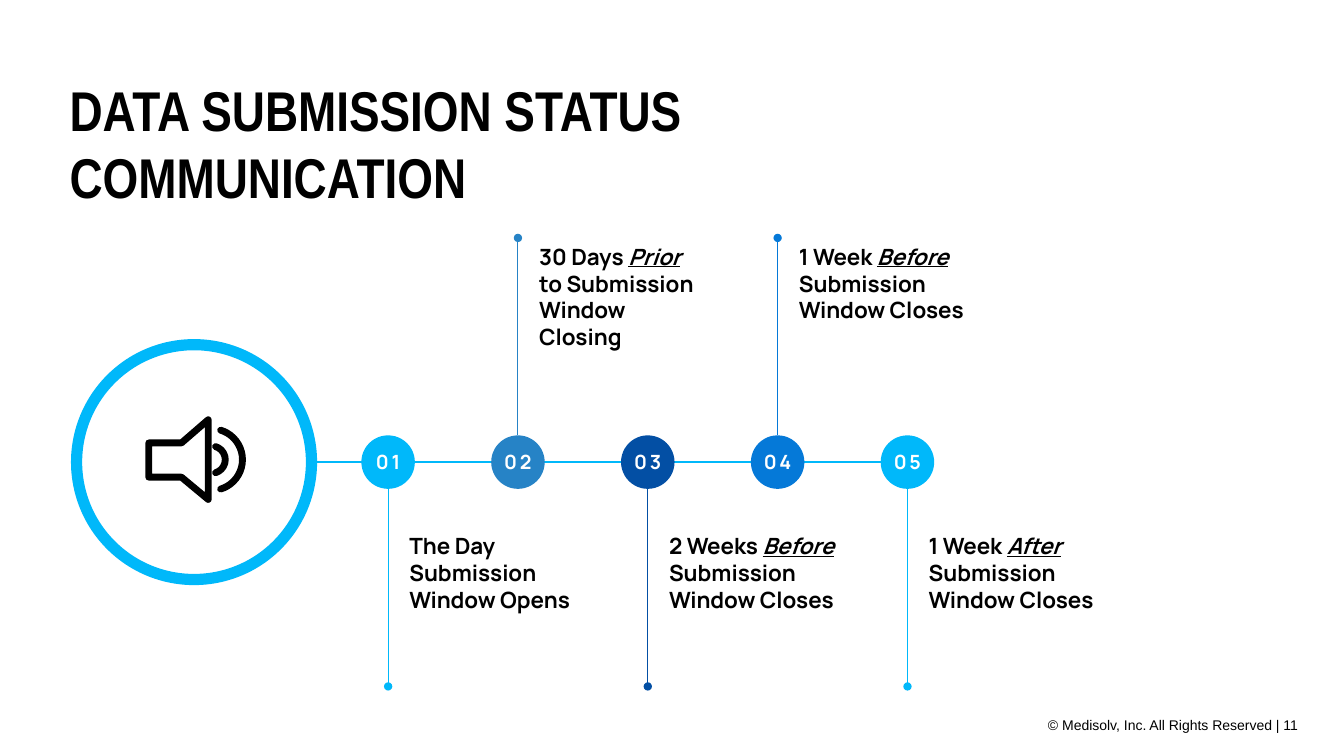
"""Build the data submission status timeline slide."""
from lxml.etree import SubElement
from pptx import Presentation
from pptx.dml.color import RGBColor
from pptx.enum.shapes import MSO_CONNECTOR, MSO_SHAPE
from pptx.enum.text import MSO_ANCHOR, MSO_AUTO_SIZE, PP_ALIGN
from pptx.oxml.ns import qn
from pptx.util import Inches, Pt

TITLE = "DATA SUBMISSION STATUS COMMUNICATION"
COPYRIGHT = "© Medisolv, Inc. All Rights Reserved | 11"
MILESTONES = [
    ("01", ("The Day Submission Window Opens", "", ""), "sky"),
    ("02", ("30 Days ", "Prior", " to Submission Window Closing"), "steel"),
    ("03", ("2 Weeks ", "Before", " Submission Window Closes"), "navy"),
    ("04", ("1 Week ", "Before ", "Submission Window Closes"), "azure"),
    ("05", ("1 Week ", "After", " Submission Window Closes"), "sky"),
]

THEME = {
    "colours": {"sky": "00B8FA", "steel": "2683C6", "navy": "034FA4",
                "azure": "0579D8", "black": "000000", "white": "FFFFFF"},
    "title": {"name": "Arial Narrow", "size": 40, "bold": True, "colour": "black"},
    "label": {"name": "Manrope", "size": 16, "bold": True, "colour": "black"},
    "number": {"name": "Manrope", "size": 14, "bold": True, "colour": "white"},
    "footer": {"name": "Arial", "size": 10, "bold": False, "colour": "black"},
    "strokes": {"ring": 8, "axis": 1, "stem": 0.75, "icon": 4.9},
}

SLIDE_WIDTH, SLIDE_HEIGHT = Inches(13.33), Inches(7.5)
COLUMN, ROW = SLIDE_WIDTH / 100, SLIDE_HEIGHT / 100

TITLE_BOX = (5.18, 9.2, 57.84, 19.33)
FOOTER_BOX = (47.26, 94.13, 50.04, 3.6)
AXIS_ROW = 61.13
RING_COLUMN, RING_DIAMETER = 14.44, 17.48
FIRST_COLUMN, LAST_COLUMN, NODE_DIAMETER = 28.88, 67.52, 3.98
ABOVE = {"direction": -1, "tip": 31.47, "top": 31.47, "width": 12.45, "height": 15.73}
BELOW = {"direction": 1, "tip": 90.8, "top": 69.73, "width": 13.28, "height": 12.13}
LABEL_GAP = 1.58
SPEAKER = [(11.07, 58.6), (13.5, 58.6), (15.49, 55.53),
           (15.49, 66.07), (13.5, 63.13), (11.07, 63.13)]
WAVE_COLUMN, WAVE_ROW, WAVE_DIAMETERS, WAVE_ANGLE = 15.75, 60.8, (2.03, 4.58), 73


def colour(name):
    return RGBColor.from_string(THEME["colours"][name])


def box(left, top, width, height):
    return (round(left * COLUMN), round(top * ROW),
            round(width * COLUMN), round(height * ROW))


def round_box(column, row, diameter):
    size = diameter * COLUMN
    return (round(column * COLUMN - size / 2), round(row * ROW - size / 2),
            round(size), round(size))


def add_run(paragraph, text, style, **extra):
    run = paragraph.add_run()
    run.text = text
    settings = {"name": style["name"], "size": Pt(style["size"]), "bold": style["bold"]}
    for attribute, value in {**settings, **extra}.items():
        setattr(run.font, attribute, value)
    run.font.color.rgb = colour(style["colour"])
    return run


def prepare_frame(shape, side_inset=0, **extra):
    settings = {"word_wrap": True, "auto_size": MSO_AUTO_SIZE.NONE,
                "margin_left": Inches(side_inset), "margin_right": Inches(side_inset),
                "margin_top": Inches(0.05), "margin_bottom": Inches(0.05),
                "vertical_anchor": MSO_ANCHOR.TOP}
    for attribute, value in {**settings, **extra}.items():
        setattr(shape.text_frame, attribute, value)
    return shape.text_frame.paragraphs[0]


def set_stroke(shape, colour_name, stroke):
    shape.line.color.rgb = colour(colour_name)
    shape.line.width = Pt(THEME["strokes"][stroke])
    return shape.element.spPr.find(qn("a:ln"))


def outline(shape, colour_name, stroke):
    shape.shadow.inherit = False
    shape.fill.background()
    return set_stroke(shape, colour_name, stroke)


def add_line(slide, start, end, colour_name, stroke):
    connector = slide.shapes.add_connector(
        MSO_CONNECTOR.STRAIGHT, *(round(value) for value in (*start, *end)))
    line = set_stroke(connector, colour_name, stroke)
    SubElement(connector.element.spPr, qn("a:effectLst"))
    return line


def add_title(slide):
    title = slide.shapes.title
    title.left, title.top, title.width, title.height = box(*TITLE_BOX)
    paragraph = prepare_frame(title, vertical_anchor=MSO_ANCHOR.MIDDLE)
    paragraph.alignment = PP_ALIGN.LEFT
    add_run(paragraph, TITLE, THEME["title"])


def add_footer(slide):
    footer = slide.shapes.add_textbox(*box(*FOOTER_BOX))
    paragraph = prepare_frame(footer, 0.1)
    paragraph.alignment = PP_ALIGN.RIGHT
    add_run(paragraph, COPYRIGHT, THEME["footer"])


def add_speaker(slide):
    points = [(round(column * COLUMN), round(row * ROW)) for column, row in SPEAKER]
    builder = slide.shapes.build_freeform(*points[0])
    builder.add_line_segments(points[1:], close=True)
    parts = [builder.convert_to_shape()]
    for diameter in WAVE_DIAMETERS:
        wave = slide.shapes.add_shape(
            MSO_SHAPE.ARC, *round_box(WAVE_COLUMN, WAVE_ROW, diameter))
        wave.adjustments[0] = (360 - WAVE_ANGLE) * 0.6
        wave.adjustments[1] = WAVE_ANGLE * 0.6
        parts.append(wave)
    for part in parts:
        line = outline(part, "black", "icon")
        line.set("cap", "rnd")
        SubElement(line, qn("a:round"))


def add_milestone(slide, column, side, number, label, colour_name):
    edge = AXIS_ROW * ROW + side["direction"] * NODE_DIAMETER * COLUMN / 2
    line = add_line(slide, (column * COLUMN, side["tip"] * ROW),
                    (column * COLUMN, edge), colour_name, "stem")
    SubElement(line, qn("a:headEnd"), type="oval")

    node = slide.shapes.add_shape(
        MSO_SHAPE.OVAL, *round_box(column, AXIS_ROW, NODE_DIAMETER))
    node.shadow.inherit = False
    node.fill.solid()
    node.fill.fore_color.rgb = colour(colour_name)
    node.line.fill.background()
    paragraph = prepare_frame(node, word_wrap=False, vertical_anchor=MSO_ANCHOR.MIDDLE)
    paragraph.alignment = PP_ALIGN.CENTER
    run = add_run(paragraph, number, THEME["number"])
    run.font._element.set("spc", "200")

    caption = slide.shapes.add_textbox(
        *box(column + LABEL_GAP, side["top"], side["width"], side["height"]))
    paragraph = prepare_frame(caption)
    for text, emphasis in zip(label, (False, True, False)):
        if text:
            add_run(paragraph, text, THEME["label"], italic=emphasis, underline=emphasis)


def main():
    presentation = Presentation()
    presentation.slide_width, presentation.slide_height = SLIDE_WIDTH, SLIDE_HEIGHT
    slide = presentation.slides.add_slide(presentation.slide_layouts[5])
    add_title(slide)
    add_footer(slide)

    ring = slide.shapes.add_shape(
        MSO_SHAPE.OVAL, *round_box(RING_COLUMN, AXIS_ROW, RING_DIAMETER))
    outline(ring, "sky", "ring")
    add_speaker(slide)

    axis = AXIS_ROW * ROW
    add_line(slide, ((RING_COLUMN + RING_DIAMETER / 2) * COLUMN, axis),
             (LAST_COLUMN * COLUMN, axis), "sky", "axis")
    pitch = (LAST_COLUMN - FIRST_COLUMN) / (len(MILESTONES) - 1)
    for index, milestone in enumerate(MILESTONES):
        side = ABOVE if index % 2 else BELOW
        add_milestone(slide, FIRST_COLUMN + index * pitch, side, *milestone)
    presentation.save("out.pptx")


if __name__ == "__main__":
    main()
